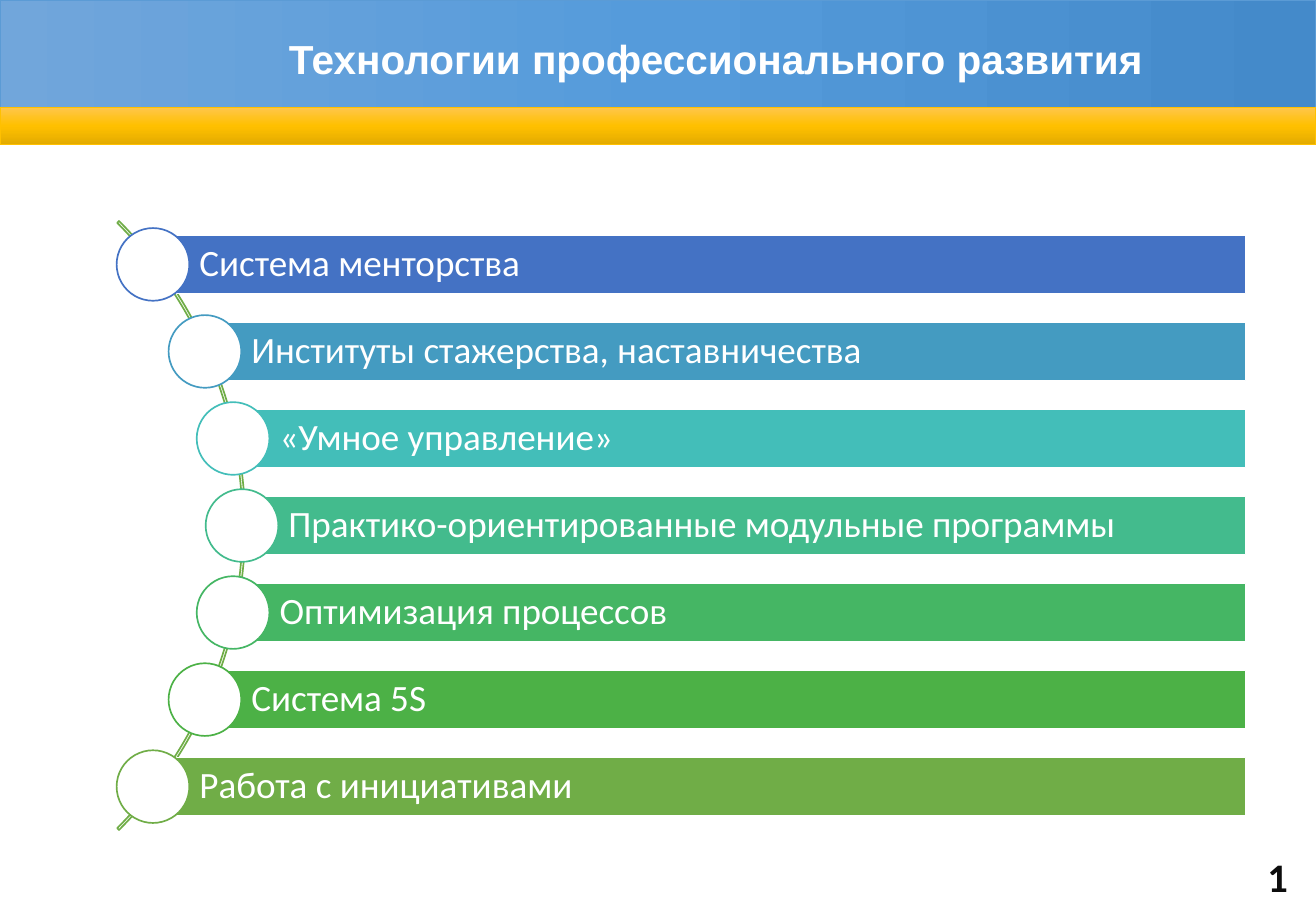
from copy import deepcopy
from math import sqrt

from pptx import Presentation
from pptx.dml.color import RGBColor
from pptx.enum.shapes import MSO_SHAPE as Preset
from pptx.enum.text import MSO_ANCHOR as Anchor, MSO_AUTO_SIZE as AutoSize, PP_ALIGN as Align
from pptx.oxml.ns import qn
from pptx.util import Cm, Pt

WHITE = RGBColor(0xFF, 0xFF, 0xFF)
NEAR_BLACK = RGBColor(0x0D, 0x0D, 0x0D)
GREEN = RGBColor(0x70, 0xAD, 0x47)
BLUE_LINE = RGBColor(0x5B, 0x9B, 0xD5)
GOLD = RGBColor(0xFF, 0xC0, 0x00)
BLUE_STOPS = [RGBColor(0x71, 0xA6, 0xDB), RGBColor(0x55, 0x9B, 0xDB), RGBColor(0x44, 0x8A, 0xCA)]
GOLD_STOPS = [RGBColor(0xFF, 0xC6, 0x4B), GOLD, RGBColor(0xE3, 0xAB, 0x00)]

TECHNOLOGIES = [
    ("Система менторства", RGBColor(0x44, 0x72, 0xC4)),
    ("Институты стажерства, наставничества", RGBColor(0x44, 0x9B, 0xC1)),
    ("«Умное управление»", RGBColor(0x43, 0xBE, 0xB9)),
    ("Практико-ориентированные модульные программы", RGBColor(0x43, 0xBB, 0x8D)),
    ("Оптимизация процессов", RGBColor(0x45, 0xB6, 0x64)),
    ("Система 5S", RGBColor(0x4C, 0xB1, 0x46)),
    ("Работа с инициативами", GREEN),
]

SLIDE_WIDTH = 27.51
ARC_X, ARC_Y, ARC_SIZE = -3.88, 10.99, 18.01
CENTRE_RADIUS = 8.94
ROW_PITCH, BAR_HEIGHT, BAR_RIGHT = 1.82, 1.22, 26.04
CIRCLE_SIZE = 1.52

prs = Presentation()
prs.slide_width, prs.slide_height = Cm(SLIDE_WIDTH), Cm(19.05)
slide = prs.slides.add_slide(prs.slide_layouts[5])


def add_outlined(preset, left, top, width, height, line_color, line_width=1):
    shape = slide.shapes.add_shape(preset, Cm(left), Cm(top), Cm(width), Cm(height))
    shape.shadow.inherit = False
    shape.line.color.rgb = line_color
    shape.line.width = Pt(line_width)
    return shape


def write(shape, text, margins, frame_format, paragraph_format, font_format, color):
    """Fill a shape with one formatted paragraph; margins are left, top, right, bottom in cm."""
    frame = shape.text_frame
    frame.text = text
    paragraph = frame.paragraphs[0]
    sides = ("margin_left", "margin_top", "margin_right", "margin_bottom")
    frame_format = frame_format | dict(zip(sides, map(Cm, margins)))
    font = paragraph.runs[0].font
    for target, values in ((frame, frame_format), (paragraph, paragraph_format), (font, font_format)):
        for name, value in values.items():
            setattr(target, name, value)
    font.color.rgb = color
    return paragraph


# Arc with the technologies strung along it
arc = add_outlined(Preset.BLOCK_ARC, ARC_X - ARC_SIZE / 2, ARC_Y - ARC_SIZE / 2, ARC_SIZE, ARC_SIZE, GREEN)
arc.fill.background()
for index, value in enumerate((189, 27, 0.003)):
    arc.adjustments[index] = value

for row, (technology, color) in enumerate(TECHNOLOGIES):
    offset = (row - len(TECHNOLOGIES) // 2) * ROW_PITCH
    x = ARC_X + sqrt(CENTRE_RADIUS**2 - offset**2)
    y = ARC_Y + offset
    bar = add_outlined(Preset.RECTANGLE, x, y - BAR_HEIGHT / 2, BAR_RIGHT - x, BAR_HEIGHT, WHITE)
    bar.fill.solid()
    bar.fill.fore_color.rgb = color
    write(bar, technology, (0.97, 0.15, 0.15, 0.15),
          {"vertical_anchor": Anchor.MIDDLE, "word_wrap": True},
          {"alignment": Align.LEFT, "line_spacing": 0.9},
          {"name": "Calibri", "size": Pt(22)}, WHITE)
    circle = add_outlined(Preset.OVAL, x - CIRCLE_SIZE / 2, y - CIRCLE_SIZE / 2, CIRCLE_SIZE, CIRCLE_SIZE, color)
    circle.fill.solid()
    circle.fill.fore_color.rgb = WHITE

# Header bands
for top, height, angle, stops, line_color in (
    (0, 2.24, 0, BLUE_STOPS, BLUE_LINE),
    (2.24, 0.79, 270, GOLD_STOPS, GOLD),
):
    band = add_outlined(Preset.RECTANGLE, 0, top, SLIDE_WIDTH, height, line_color, 0.5)
    band.fill.gradient()
    band.fill.gradient_angle = angle
    first_stop = next(band.element.iter(qn("a:gs")))
    first_stop.addnext(deepcopy(first_stop))
    for index, (stop, color) in enumerate(zip(band.fill.gradient_stops, stops)):
        stop.position = index / 2
        stop.color.rgb = color

# Title, brought in front of the header
title = slide.shapes.title
slide.shapes.element.append(title.element)
title.left, title.top, title.width, title.height = Cm(2.67), Cm(0.51), Cm(23.57), Cm(1.35)
heading = write(title, "Технологии профессионального развития", (0.25, 0.13, 0.25, 0.13),
                {"vertical_anchor": Anchor.TOP, "word_wrap": True, "auto_size": AutoSize.SHAPE_TO_FIT_TEXT},
                {"alignment": Align.CENTER, "line_spacing": 1.07},
                {"name": "Arial", "size": Pt(24), "bold": True}, WHITE)
heading.element.get_or_add_pPr().set("indent", str(Cm(1.02))) if hasattr(heading, "element") else \
    heading._p.get_or_add_pPr().set("indent", str(Cm(1.02)))

page_number = slide.shapes.add_textbox(Cm(26.24), Cm(17.68), Cm(0.94), Cm(1.27))
write(page_number, "1", (0.25, 0.13, 0.25, 0.13),
      {"word_wrap": False, "auto_size": AutoSize.SHAPE_TO_FIT_TEXT},
      {"alignment": Align.CENTER},
      {"name": "Calibri", "size": Pt(24), "bold": True}, NEAR_BLACK)

prs.save("out.pptx")
